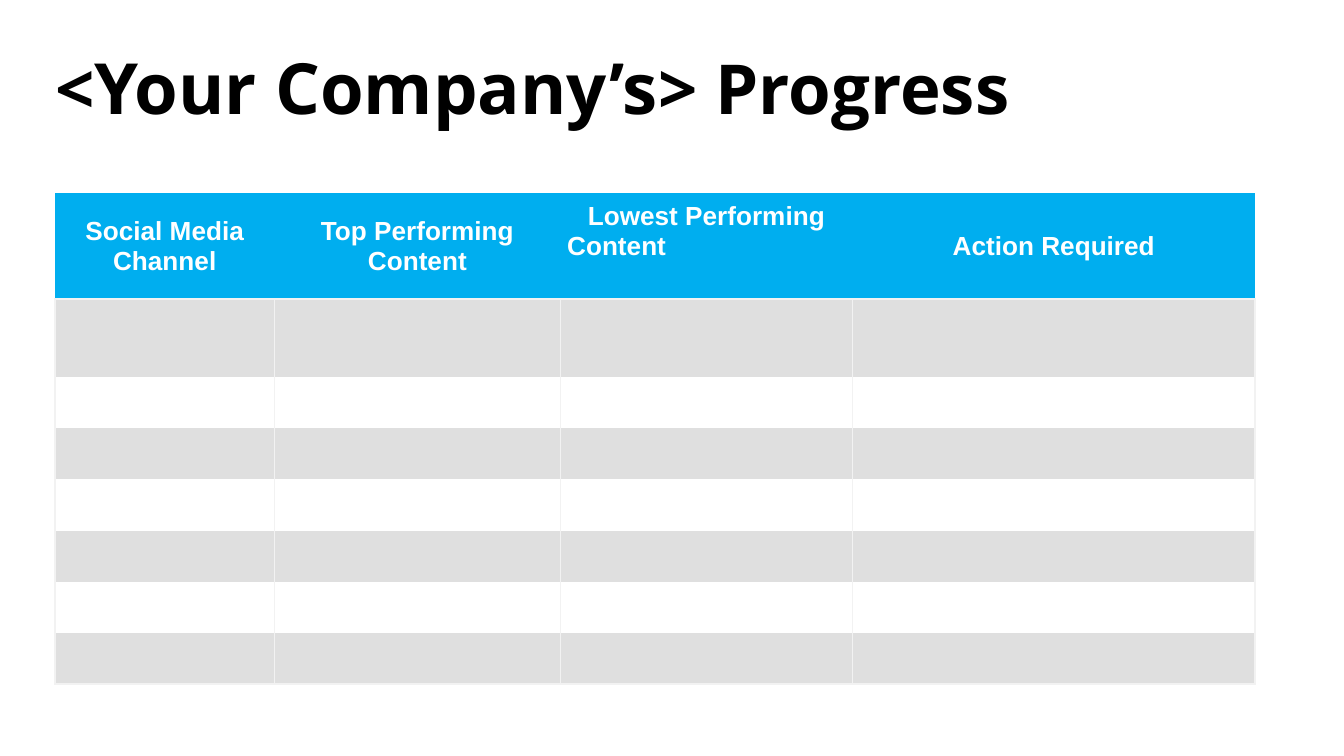
from lxml import etree
from pptx import Presentation
from pptx.dml.color import RGBColor
from pptx.enum.text import MSO_ANCHOR, PP_ALIGN
from pptx.oxml.ns import qn
from pptx.util import Pt

CENTER, LEFT = PP_ALIGN.CENTER, PP_ALIGN.LEFT
MIDDLE = MSO_ANCHOR.MIDDLE

COLORS = {
    "title": "000000",
    "header": "00AEEF",
    "header_text": "FFFFFF",
    "band": "DFDFDF",
    "plain": "FFFFFF",
    "rule": "F2F2F2",
}
TITLE_RUNS = [("<", 36.9), ("Your Company’s", 37.8), ("> Progress", 36.9)]
HEADERS = [
    [("Social Media Channel", CENTER)],
    [("Top Performing Content", CENTER)],
    [("Lowest Performing", CENTER), ("Content", LEFT)],
    [("Action Required", CENTER)],
]
COLUMN_WIDTHS = [117.5, 153.25, 156.5, 215.75]
ROW_HEIGHTS = [53.6, 41.8] + [27.4] * 6
CELL_MARGIN = 3.6
HEADER_LINE = 16


def add_text(paragraph, text, font="Arial", size=14, color="header_text", align=LEFT):
    """Append a bold run to a paragraph in the given format."""
    paragraph.alignment = align
    run = paragraph.add_run()
    run.text = text
    run.font.name = font
    run.font.size = Pt(size)
    run.font.bold = True
    run.font.color.rgb = RGBColor.from_string(COLORS[color])


def set_borders(cell, visible_sides):
    """Draw thin rules on the named sides of a cell and clear the others."""
    properties = cell._tc.get_or_add_tcPr()
    for index, side in enumerate("LRTB"):
        line = etree.Element(qn(f"a:ln{side}"), w=str(Pt(1)))
        if side in visible_sides:
            fill = etree.SubElement(line, qn("a:solidFill"))
            etree.SubElement(fill, qn("a:srgbClr"), val=COLORS["rule"])
        else:
            etree.SubElement(line, qn("a:noFill"))
        properties.insert(index, line)


def style_cell(cell, color, sides, margin):
    """Set the fill, rules and margins of a cell."""
    cell.fill.solid()
    cell.fill.fore_color.rgb = RGBColor.from_string(COLORS[color])
    cell.vertical_anchor = MIDDLE
    cell.margin_left = cell.margin_right = Pt(CELL_MARGIN)
    cell.margin_top = cell.margin_bottom = Pt(margin)
    set_borders(cell, sides)


def add_title(slide, left, top, width, height):
    """Add the slide title in the given box."""
    frame = slide.shapes.add_textbox(Pt(left), Pt(top), Pt(width), Pt(height)).text_frame
    frame.word_wrap = True
    frame.vertical_anchor = MIDDLE
    frame.margin_left = frame.margin_right = frame.margin_top = frame.margin_bottom = 0
    paragraph = frame.paragraphs[0]
    paragraph.line_spacing = 0.9
    for text, size in TITLE_RUNS:
        add_text(paragraph, text, font="Open Sans", size=size, color="title")


def fill_header(cell, lines):
    """Write a column heading, keeping split headings toward the top."""
    style_cell(cell, "header", "B", CELL_MARGIN)
    frame = cell.text_frame
    for index, (text, align) in enumerate(lines):
        paragraph = frame.add_paragraph() if index else frame.paragraphs[0]
        add_text(paragraph, text, align=align)
    if len(lines) > 1:
        cell.margin_bottom = Pt(CELL_MARGIN + HEADER_LINE)


def add_progress_table(slide, left, top):
    """Add the progress table with its headings and empty banded rows."""
    table = slide.shapes.add_table(
        len(ROW_HEIGHTS), len(COLUMN_WIDTHS), Pt(left), Pt(top),
        Pt(sum(COLUMN_WIDTHS)), Pt(sum(ROW_HEIGHTS)),
    ).table
    table.first_row = table.horz_banding = False
    for column, width in zip(table.columns, COLUMN_WIDTHS):
        column.width = Pt(width)
    for row, height in zip(table.rows, ROW_HEIGHTS):
        row.height = Pt(height)
    for column, lines in enumerate(HEADERS):
        fill_header(table.cell(0, column), lines)
    last = len(ROW_HEIGHTS) - 1
    for row in range(1, last + 1):
        sides = "LR" + ("T" if row == 1 else "") + ("B" if row == last else "")
        for column in range(len(COLUMN_WIDTHS)):
            style_cell(table.cell(row, column), "band" if row % 2 else "plain", sides, 2)


def main():
    """Build and save the presentation."""
    presentation = Presentation()
    presentation.slide_width, presentation.slide_height = Pt(720), Pt(405)
    slide = presentation.slides.add_slide(presentation.slide_layouts[6])
    add_title(slide, 29.5, 25.9, 664.5, 46.8)
    add_progress_table(slide, 29.5, 103.5)
    presentation.save("out.pptx")


if __name__ == "__main__":
    main()
